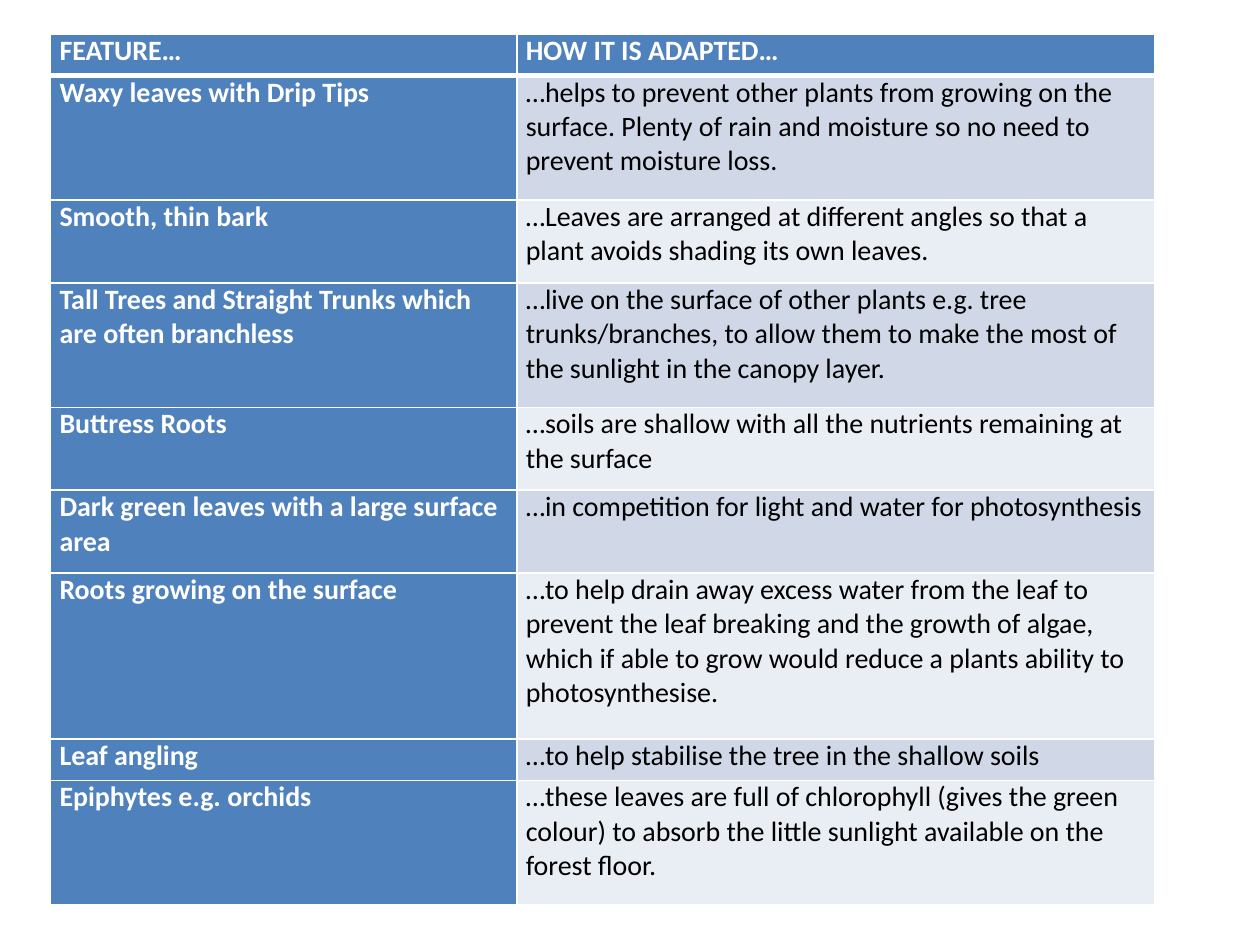
import pptx
import pptx.dml.color
import pptx.oxml
import pptx.oxml.ns
import pptx.util
from pptx.util import Cm

WHITE = pptx.dml.color.RGBColor(0xFF, 0xFF, 0xFF)
BLACK = pptx.dml.color.RGBColor(0x00, 0x00, 0x00)
BLUE = pptx.dml.color.RGBColor(0x4F, 0x81, 0xBD)
BAND_DARK = pptx.dml.color.RGBColor(0xD0, 0xD8, 0xE8)
BAND_LIGHT = pptx.dml.color.RGBColor(0xE9, 0xED, 0xF4)

TABLE_LEFT, TABLE_TOP = Cm(1.02), Cm(0.69)
TABLE_HEIGHT = Cm(17.55)
COLUMN_WIDTHS = (Cm(9.4), Cm(12.85))

# Feature, adaptation, row height in units of the shortest row
ROWS = [
    ("FEATURE…", "HOW IT IS ADAPTED…", 1),
    ("Waxy leaves with Drip Tips",
     "…helps to prevent other plants from growing on the surface. "
     "Plenty of rain and moisture so no need to prevent moisture loss.", 3),
    ("Smooth, thin bark",
     "…Leaves are arranged at different angles so that a plant avoids "
     "shading its own leaves.", 2),
    ("Tall Trees and Straight Trunks which are often branchless",
     "…live on the surface of other plants e.g. tree trunks/branches, to "
     "allow them to make the most of the sunlight in the canopy layer.", 3),
    ("Buttress Roots",
     "…soils are shallow with all the nutrients remaining at the surface", 2),
    ("Dark green leaves with a large surface area",
     "…in competition for light and water for photosynthesis", 2),
    ("Roots growing on the surface",
     "…to help drain away excess water from the leaf to prevent the leaf "
     "breaking and the growth of algae, which if able to grow would reduce "
     "a plants ability to photosynthesise.", 4),
    ("Leaf angling", "…to help stabilise the tree in the shallow soils", 1),
    ("Epiphytes e.g. orchids",
     "…these leaves are full of chlorophyll (gives the green colour) to "
     "absorb the little sunlight available on the forest floor.", 3),
]


def set_border(cell, side, points):
    """Add a white border; side is L, R, T or B."""
    line = pptx.oxml.parse_xml(
        f'<a:ln{side} {pptx.oxml.ns.nsdecls("a")} w="{pptx.util.Pt(points)}">'
        f'<a:solidFill><a:srgbClr val="{WHITE}"/></a:solidFill></a:ln{side}>')
    cell._tc.get_or_add_tcPr().append(line)


def fill_cell(cell, text, fill_color, text_color, bold, top_points, bottom_points):
    cell.margin_left = cell.margin_right = Cm(0.18)
    cell.margin_top = cell.margin_bottom = 0

    # Borders must precede the fill in the cell properties
    for side, points in (("L", 1), ("R", 1), ("T", top_points), ("B", bottom_points)):
        set_border(cell, side, points)
    cell.fill.solid()
    cell.fill.fore_color.rgb = fill_color

    run = cell.text_frame.paragraphs[0].add_run()
    run.text = text
    run.font.name = "Calibri"
    run.font.size = pptx.util.Pt(16)
    run.font.bold = bold
    run.font.color.rgb = text_color


def add_adaptation_table(slide):
    table = slide.shapes.add_table(
        len(ROWS), len(COLUMN_WIDTHS), TABLE_LEFT, TABLE_TOP,
        sum(COLUMN_WIDTHS), TABLE_HEIGHT).table
    for column, width in zip(table.columns, COLUMN_WIDTHS):
        column.width = width

    unit_height = TABLE_HEIGHT // sum(units for _, _, units in ROWS)
    for row_index, (feature, adaptation, units) in enumerate(ROWS):
        table.rows[row_index].height = unit_height * units
        band = BAND_DARK if row_index % 2 else BAND_LIGHT
        top_points = 3 if row_index == 1 else 1
        bottom_points = 3 if row_index == 0 else 1
        for column_index, text in enumerate((feature, adaptation)):
            heading = row_index == 0 or column_index == 0
            fill_cell(table.cell(row_index, column_index), text,
                      BLUE if heading else band,
                      WHITE if heading else BLACK,
                      heading, top_points, bottom_points)


def main():
    presentation = pptx.Presentation()
    presentation.slide_width = Cm(25.4)
    presentation.slide_height = Cm(19.05)

    # Blank layout: the table is the only content
    slide = presentation.slides.add_slide(presentation.slide_layouts[6])
    add_adaptation_table(slide)
    presentation.save("out.pptx")


if __name__ == "__main__":
    main()
